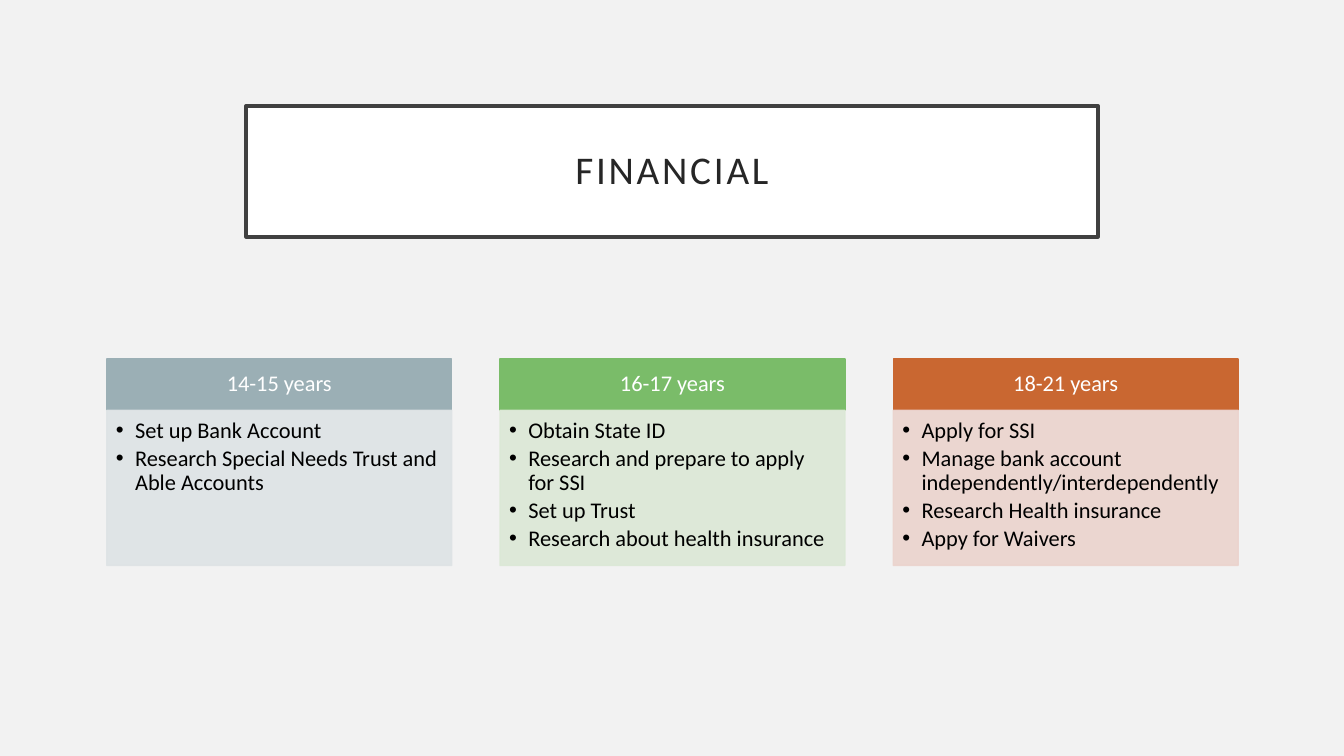
from lxml.etree import SubElement
from pptx import Presentation
from pptx.dml.color import RGBColor
from pptx.enum.shapes import MSO_SHAPE
from pptx.enum.text import MSO_ANCHOR, PP_ALIGN
from pptx.oxml.ns import qn
from pptx.util import Inches, Pt

FONT = "Calibri"
BACKGROUND = RGBColor(0xF2, 0xF2, 0xF2)
WHITE = RGBColor(0xFF, 0xFF, 0xFF)
BLACK = RGBColor(0x00, 0x00, 0x00)
TITLE_LINE = RGBColor(0x40, 0x40, 0x40)
TITLE_TEXT = RGBColor(0x26, 0x26, 0x26)
BLUE_GREY = RGBColor(0x9B, 0xAF, 0xB5)
PALE_BLUE_GREY = RGBColor(0xDE, 0xE3, 0xE5)
GREEN = RGBColor(0x7A, 0xBC, 0x69)
PALE_GREEN = RGBColor(0xDB, 0xE8, 0xD6)
ORANGE = RGBColor(0xC9, 0x67, 0x31)
PALE_ORANGE = RGBColor(0xEB, 0xD3, 0xCD)

AGE_GROUPS = [
    ("14-15 years", BLUE_GREY, PALE_BLUE_GREY, [
        "Set up Bank Account",
        "Research Special Needs Trust and Able Accounts",
    ]),
    ("16-17 years", GREEN, PALE_GREEN, [
        "Obtain State ID",
        "Research and prepare to apply for SSI",
        "Set up Trust",
        "Research about health insurance",
    ]),
    ("18-21 years", ORANGE, PALE_ORANGE, [
        "Apply for SSI",
        "Manage bank account independently/interdependently",
        "Research Health insurance",
        "Appy for Waivers",
    ]),
]
COLUMN_WIDTH = 3.42
COLUMN_PITCH = 3.9
HEADER_HEIGHT = 0.51


def paint(box, fill, line, line_width):
    box.fill.solid()
    box.fill.fore_color.rgb = fill
    box.line.color.rgb = line
    box.line.width = Pt(line_width)


def make_translucent(box, percent):
    for color in box._element.spPr.iter(qn("a:srgbClr")):
        SubElement(color, qn("a:alpha"), val=str(percent * 1000))


def set_frame(frame, anchor, insets):
    """Anchor the text and set its left, top, right and bottom insets in inches."""
    frame.word_wrap = True
    frame.vertical_anchor = anchor
    (frame.margin_left, frame.margin_top,
     frame.margin_right, frame.margin_bottom) = map(Inches, insets)


def format_paragraph(paragraph, size, color, alignment):
    paragraph.alignment = alignment
    paragraph.line_spacing = 0.9
    for span in paragraph.runs:
        span.font.name = FONT
        span.font.size = Pt(size)
        span.font.color.rgb = color


def add_bullet(paragraph):
    properties = paragraph._p.get_or_add_pPr()
    properties.set("marL", str(Inches(0.19)))
    properties.set("indent", str(-Inches(0.19)))
    SubElement(properties, qn("a:buFont"), typeface="Arial")
    SubElement(properties, qn("a:buChar"), char="•")


def fill_title(page, text, left, top, width, height):
    title = page.shapes.title
    title.left, title.top, title.width, title.height = map(
        Inches, (left, top, width, height))
    paint(title, WHITE, TITLE_LINE, 2.5)
    title.text_frame.text = text
    set_frame(title.text_frame, MSO_ANCHOR.MIDDLE, (0.2, 0.2, 0.2, 0.2))
    paragraph = title.text_frame.paragraphs[0]
    format_paragraph(paragraph, 28, TITLE_TEXT, PP_ALIGN.CENTER)
    paragraph.runs[0].font._element.set("spc", "200")


def add_panel(page, left, top, width, height, color):
    panel = page.shapes.add_shape(
        MSO_SHAPE.RECTANGLE, *map(Inches, (left, top, width, height)))
    panel.shadow.inherit = False
    paint(panel, color, color, 1)
    return panel


def add_age_column(page, group, left, top, width, height):
    """Stack a coloured age header on a pale panel of bulleted tasks."""
    age, color, pale_color, tasks = group
    header = add_panel(page, left, top, width, HEADER_HEIGHT, color)
    header.text_frame.text = age
    set_frame(header.text_frame, MSO_ANCHOR.MIDDLE, (0.12, 0.07, 0.12, 0.07))
    format_paragraph(header.text_frame.paragraphs[0], 16, WHITE, PP_ALIGN.CENTER)

    body = add_panel(page, left, top + HEADER_HEIGHT, width,
                     height - HEADER_HEIGHT, pale_color)
    make_translucent(body, 90)
    body.text_frame.text = "\n".join(tasks)
    set_frame(body.text_frame, MSO_ANCHOR.TOP, (0.09, 0.09, 0.12, 0.14))
    for paragraph in body.text_frame.paragraphs:
        paragraph.level = 1
        format_paragraph(paragraph, 16, BLACK, PP_ALIGN.LEFT)
        paragraph.space_after = Pt(2.7)
        add_bullet(paragraph)


def add_age_columns(page, left, top, height):
    for index, group in enumerate(AGE_GROUPS):
        add_age_column(page, group, left + index * COLUMN_PITCH, top,
                       COLUMN_WIDTH, height)


def main():
    deck = Presentation()
    deck.slide_width, deck.slide_height = Inches(13.33), Inches(7.5)
    page = deck.slides.add_slide(deck.slide_layouts.get_by_name("Title Only"))
    page.background.fill.solid()
    page.background.fill.fore_color.rgb = BACKGROUND
    fill_title(page, "FINANCIAL", 2.44, 1.05, 8.45, 1.3)
    add_age_columns(page, 1.06, 3.56, 2.05)
    deck.save("out.pptx")


if __name__ == "__main__":
    main()
